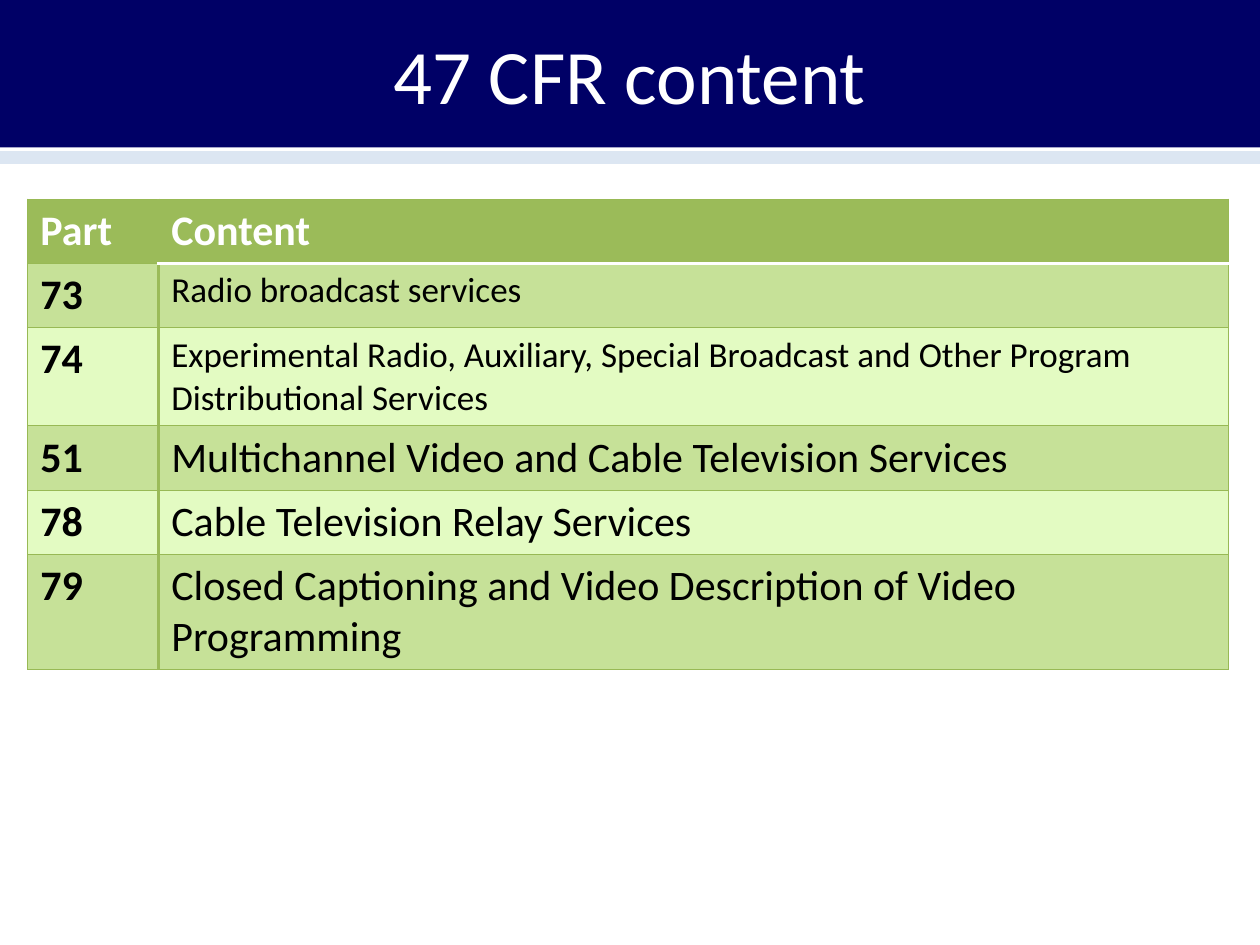
"""Build the 47 CFR content slide: a title band above a table of parts."""
from lxml.etree import SubElement
from pptx import Presentation
from pptx.dml.color import RGBColor
from pptx.enum.shapes import MSO_CONNECTOR, MSO_SHAPE
from pptx.enum.text import MSO_ANCHOR, PP_ALIGN
from pptx.oxml.ns import qn
from pptx.util import Inches, Pt

TITLE = "47 CFR content"
HEADER = ("Part", "Content")
PARTS = [
    ("73", "Radio broadcast services", "small", 0.51),
    ("74", "Experimental Radio, Auxiliary, Special Broadcast and Other Program "
           "Distributional Services", "small", 0.78),
    ("51", "Multichannel Video and Cable Television Services", "body", 0.51),
    ("78", "Cable Television Relay Services", "body", 0.51),
    ("79", "Closed Captioning and Video Description of Video Programming", "body", 0.91),
]
HEADER_HEIGHT = 0.51
COLUMNS = (1.04, 8.49)
THEME = {
    "font": "Calibri",
    "title": 44, "body": 24, "small": 20,
    "navy": "000066", "pale": "DCE6F2", "white": "FFFFFF", "black": "000000",
    "green": "9BBB59", "edge": "98B955", "bands": ("C6E198", "E3FBC2"),
}


def color(name):
    return RGBColor.from_string(THEME.get(name, name))


def add_text(tf, text, size, ink, bold=False):
    r = tf.paragraphs[0].add_run()
    r.text = text
    r.font.name = THEME["font"]
    r.font.size = Pt(THEME[size])
    r.font.bold = bold
    r.font.color.rgb = color(ink)


def set_border(cell, side, ink, width):
    ln = SubElement(cell._tc.get_or_add_tcPr(), qn("a:ln" + side), w=str(Pt(width)))
    SubElement(SubElement(ln, qn("a:solidFill")), qn("a:srgbClr"), val=THEME[ink])


def fill_cell(cell, row, col, text, size):
    thin, divider = ("edge", 0.75), ("green", 2)
    rule = ("white", 2) if col else thin
    borders = {
        "L": divider if col else thin,
        "R": thin if col else divider,
        "T": rule if row == 1 else thin,
        "B": rule if row == 0 else thin,
    }
    for side, (ink, width) in borders.items():
        set_border(cell, side, ink, width)
    cell.fill.solid()
    cell.fill.fore_color.rgb = color(THEME["bands"][(row - 1) % 2] if row else "green")
    add_text(cell.text_frame, text, size, "black" if row else "white",
             bold=row == 0 or col == 0)


def add_band(s):
    sp = s.shapes.add_shape(MSO_SHAPE.RECTANGLE, 0, Inches(-0.08), Inches(10), Inches(1.25))
    sp.shadow.inherit = False
    sp.fill.solid()
    sp.fill.fore_color.rgb = color("navy")
    sp.line.fill.background()
    line = s.shapes.add_connector(
        MSO_CONNECTOR.STRAIGHT, 0, Inches(1.25), Inches(10), Inches(1.25))
    line.line.color.rgb = color("pale")
    line.line.width = Pt(8)
    SubElement(line._element.spPr, qn("a:effectLst"))


def add_title(s):
    title = s.shapes.title
    title.left, title.top = Inches(0.5), Inches(-0.04)
    title.width, title.height = Inches(9), Inches(1.25)
    tf = title.text_frame
    tf.vertical_anchor = MSO_ANCHOR.MIDDLE
    tf.paragraphs[0].alignment = PP_ALIGN.CENTER
    add_text(tf, TITLE, "title", "white")
    s.shapes._spTree.append(title._element)


def add_parts_table(s):
    rows = [(*HEADER, "body", HEADER_HEIGHT), *PARTS]
    table = s.shapes.add_table(
        len(rows), len(COLUMNS), Inches(0.22), Inches(1.58),
        Inches(sum(COLUMNS)), Inches(sum(row[-1] for row in rows))).table
    for column, width in zip(table.columns, COLUMNS):
        column.width = Inches(width)
    for i, (part, content, size, height) in enumerate(rows):
        table.rows[i].height = Inches(height)
        fill_cell(table.cell(i, 0), i, 0, part, "body")
        fill_cell(table.cell(i, 1), i, 1, content, size)


def main():
    prs = Presentation()
    prs.slide_width, prs.slide_height = Inches(10), Inches(7.5)
    s = prs.slides.add_slide(prs.slide_layouts[5])
    add_band(s)
    add_title(s)
    add_parts_table(s)
    prs.save("out.pptx")


if __name__ == "__main__":
    main()
